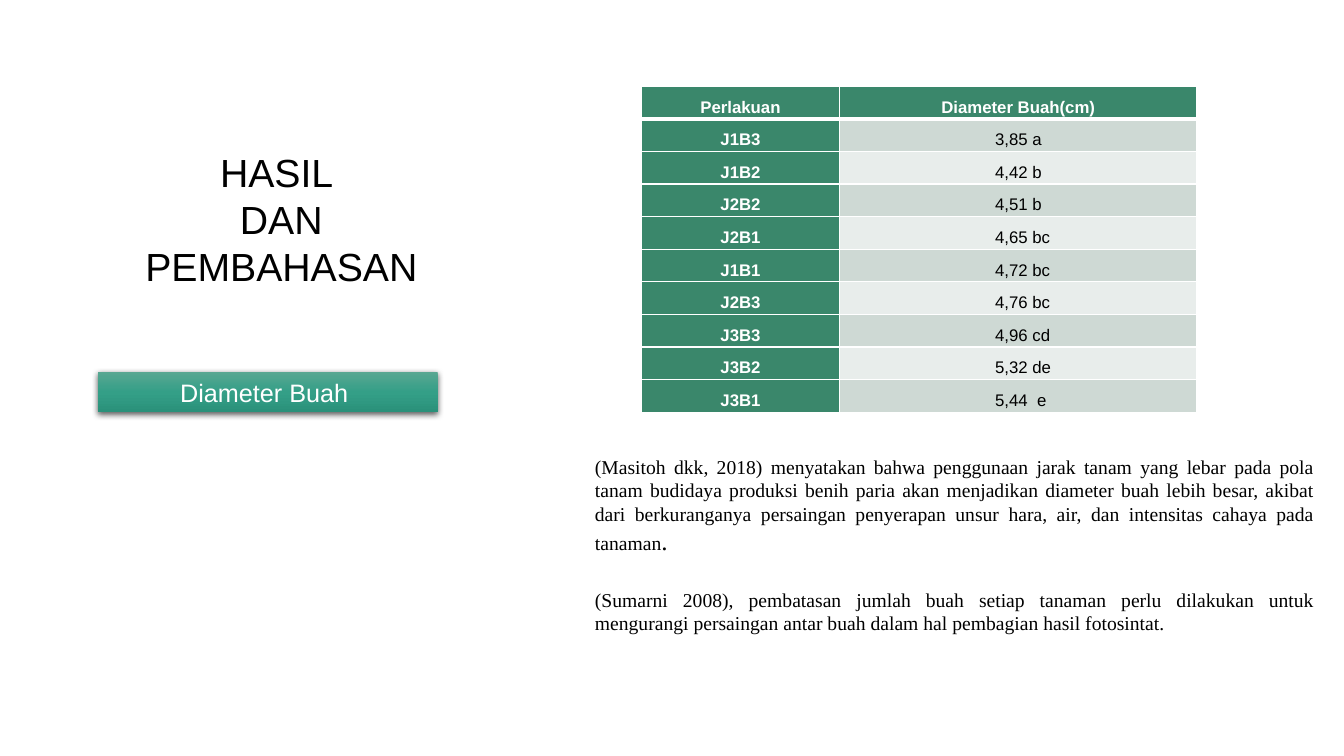
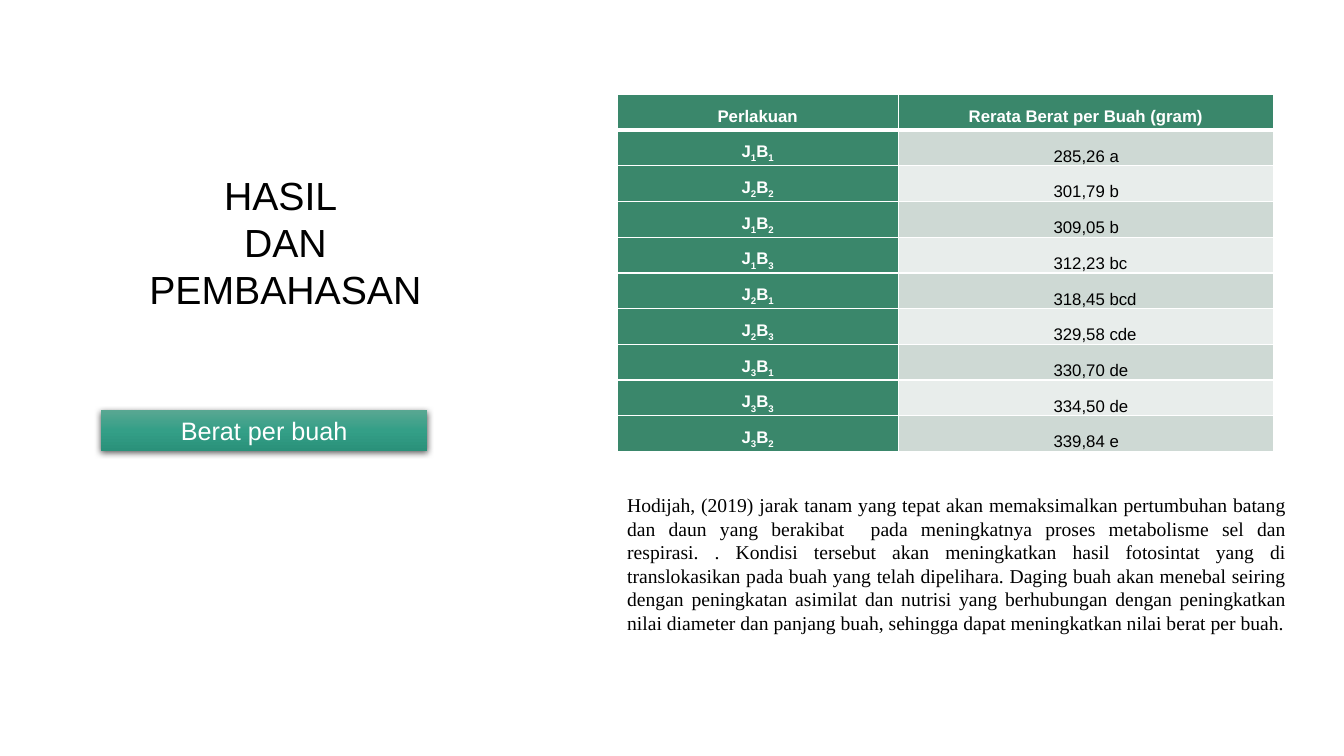
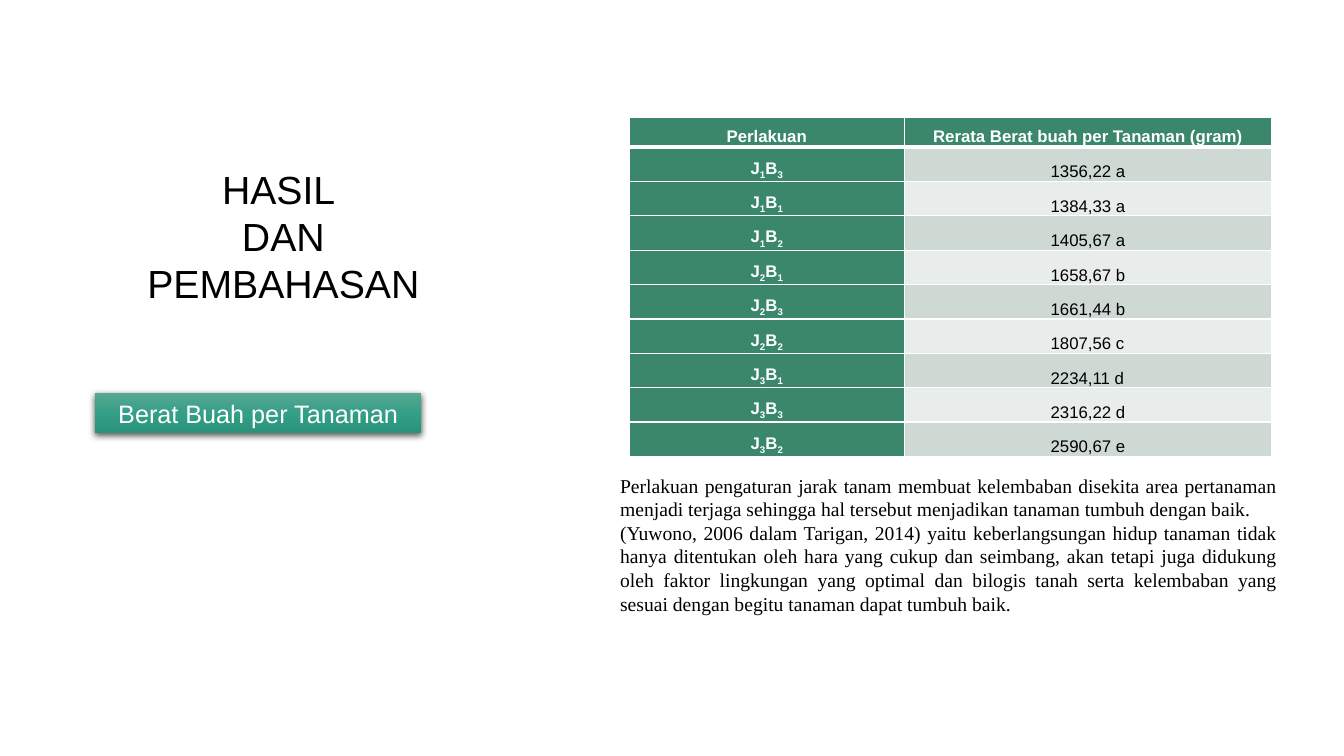
import pptx
import pptx.dml.color
import pptx.enum.shapes
import pptx.enum.text
import pptx.oxml
import pptx.oxml.ns
import pptx.util

Inches, Pt = pptx.util.Inches, pptx.util.Pt
ALIGN, ANCHOR = pptx.enum.text.PP_ALIGN, pptx.enum.text.MSO_ANCHOR
NS = pptx.oxml.ns.nsdecls("a")


def rgb(value):
    """Turn a hex string into a colour."""
    return pptx.dml.color.RGBColor.from_string(value)


def box(at):
    """Turn a left, top, width, height tuple into lengths."""
    return [Inches(v) for v in at]


class Deck:
    """Hold the style and the current slide."""

    SANS, SERIF = "Arial", "Times New Roman"
    WHITE, BLACK, GREEN = "FFFFFF", "000000", "3A876B"
    BANDS = ("CED9D4", "E8EDEB")
    GRADIENT = ((0, "59A792"), (50, "349F87"), (100, "2A917A"))

    def __init__(self):
        """Start a wide presentation."""
        self.prs = pptx.Presentation()
        self.prs.slide_width, self.prs.slide_height = Inches(13.33), Inches(7.5)
        self.s = None

    def slide(self):
        """Add a title and content slide."""
        self.s = self.prs.slides.add_slide(self.prs.slide_layouts[1])

    def font(self, r, size, name, color, bold=False):
        """Format one run."""
        r.font.size, r.font.name, r.font.bold = Pt(size), name, bold
        r.font.color.rgb = rgb(color)

    def set_text(self, sp, text, size, name, color, align, anchor):
        """Set and format the text of a shape or placeholder."""
        tf = sp.text_frame
        tf.text = text
        tf.word_wrap = True
        tf.auto_size = pptx.enum.text.MSO_AUTO_SIZE.NONE
        tf.vertical_anchor = anchor
        for p in tf.paragraphs:
            p.alignment = align
            p.space_before = Pt(0)
            for r in p.runs:
                self.font(r, size, name, color)
        return tf

    def title(self, at):
        """Fill the title placeholder with the section heading."""
        sp = self.s.shapes.title
        sp.left, sp.top, sp.width, sp.height = box(at)
        self.set_text(sp, "HASIL \nDAN\nPEMBAHASAN", 28, self.SANS, self.BLACK,
                      ALIGN.CENTER, ANCHOR.TOP)

    def body(self, at, text):
        """Fill the body placeholder with justified, unbulleted text."""
        sp = self.s.placeholders[1]
        sp.left, sp.top, sp.width, sp.height = box(at)
        tf = self.set_text(sp, text, 14, self.SERIF, self.BLACK, ALIGN.JUSTIFY, ANCHOR.TOP)
        for p in tf.paragraphs:
            pPr = p._p.get_or_add_pPr()
            pPr.set("marL", "0")
            pPr.set("indent", "0")
            pPr.append(pptx.oxml.parse_xml(f"<a:buNone {NS}/>"))
        return tf

    def label(self, at, text):
        """Draw the shaded gradient bar that names the variable."""
        sp = self.s.shapes.add_shape(pptx.enum.shapes.MSO_SHAPE.RECTANGLE, *box(at))
        sp.line.fill.background()
        sp.fill.gradient()
        sp.fill.gradient_angle = 270
        stops = sp._element.spPr.find(".//" + pptx.oxml.ns.qn("a:gsLst"))
        for stop in list(stops):
            stops.remove(stop)
        for pos, color in self.GRADIENT:
            stops.append(pptx.oxml.parse_xml(
                f'<a:gs {NS} pos="{pos * 1000}"><a:srgbClr val="{color}"/></a:gs>'))
        sp.shadow.inherit = False
        sp._element.spPr.find(pptx.oxml.ns.qn("a:effectLst")).append(pptx.oxml.parse_xml(
            f'<a:outerShdw {NS} blurRad="{Pt(4.5)}" dist="{Pt(1.5)}" dir="5400000" '
            f'algn="ctr" rotWithShape="0"><a:srgbClr val="{self.BLACK}">'
            '<a:alpha val="63000"/></a:srgbClr></a:outerShdw>'))
        self.set_text(sp, text, 18, self.SANS, self.WHITE, ALIGN.CENTER, ANCHOR.MIDDLE)

    def cell(self, c, text, fill, color, bold, bottom=1, subscript=False):
        """Fill, frame and letter one table cell."""
        c.fill.solid()
        c.fill.fore_color.rgb = rgb(fill)
        c.margin_left = c.margin_right = Inches(0.07)
        c.margin_top = c.margin_bottom = 0
        c.vertical_anchor = ANCHOR.MIDDLE
        for i, (side, width) in enumerate(zip("LRTB", (1, 1, 1, bottom))):
            c._tc.tcPr.insert(i, pptx.oxml.parse_xml(
                f'<a:ln{side} {NS} w="{Pt(width)}"><a:solidFill>'
                f'<a:srgbClr val="{self.WHITE}"/></a:solidFill></a:ln{side}>'))
        p = c.text_frame.paragraphs[0]
        p.alignment, p.line_spacing = ALIGN.CENTER, 1.5
        for part in text if subscript else [text]:
            r = p.add_run()
            r.text = part
            self.font(r, 12, self.SANS, color, bold)
            if subscript and part.isdigit():
                r._r.get_or_add_rPr().set("baseline", "-25000")

    def table(self, at, widths, header_height, heading, rows, indent, anchor, subscript):
        """Draw a table of treatments and their values, aligned at one indent."""
        t = self.s.shapes.add_table(len(rows) + 1, 2, *box(at)).table
        for col, width in zip(t.columns, widths):
            col.width = Inches(width)
        for row in t.rows:
            row.height = Inches((at[3] - header_height) / len(rows))
        t.rows[0].height = Inches(header_height)
        for j, text in enumerate(("Perlakuan", heading)):
            self.cell(t.cell(0, j), text, self.GREEN, self.WHITE, True, bottom=3)
        for i, (key, value) in enumerate(rows, 1):
            self.cell(t.cell(i, 0), key, self.GREEN, self.WHITE, True, subscript=subscript)
            c = t.cell(i, 1)
            self.cell(c, value, self.BANDS[(i - 1) % 2], self.BLACK, False)
            c.text_frame.paragraphs[0].alignment = ALIGN.LEFT
            c.margin_left = Inches(indent)
            c.vertical_anchor = anchor


def main():
    """Build the three result slides."""
    d = Deck()

    d.slide()
    d.label((0.97, 3.69, 3.37, 0.4), "Diameter Buah ")
    d.title((1.24, 1.42, 3.1, 1.51))
    tf = d.body((5.8, 4.46, 7.34, 1.88),
                "(Masitoh dkk, 2018) menyatakan bahwa penggunaan jarak tanam yang lebar pada "
                "pola tanam budidaya produksi benih paria akan menjadikan diameter buah lebih "
                "besar, akibat dari berkuranganya persaingan penyerapan unsur hara, air, dan "
                "intensitas cahaya pada tanaman\n"
                "(Sumarni 2008), pembatasan jumlah buah setiap tanaman perlu dilakukan untuk "
                "mengurangi persaingan antar buah dalam hal pembagian hasil fotosintat.")
    r = tf.paragraphs[0].add_run()
    r.text = ". "
    d.font(r, 18, d.SERIF, d.BLACK)
    tf.paragraphs[1].space_before = Pt(23)
    d.table((6.36, 0.86, 5.51, 3.23), (1.97, 3.54), 0.32, "Diameter Buah(cm)", [
        ("J1B3", "3,85 a"), ("J1B2", "4,42 b"), ("J2B2", "4,51 b"),
        ("J2B1", "4,65 bc"), ("J1B1", "4,72 bc"), ("J2B3", "4,76 bc"),
        ("J3B3", "4,96 cd"), ("J3B2", "5,32 de"), ("J3B1", "5,44  e"),
    ], 1.54, ANCHOR.MIDDLE, False)

    d.slide()
    d.label((1, 4.07, 3.24, 0.4), "Berat per buah")
    d.title((1.24, 1.65, 3.18, 1.51))
    d.body((6.12, 4.84, 6.74, 1.75),
           "Hodijah, (2019) jarak tanam yang tepat akan memaksimalkan pertumbuhan batang dan "
           "daun yang berakibat  pada meningkatnya proses metabolisme sel dan respirasi. . "
           "Kondisi tersebut akan meningkatkan hasil fotosintat yang di translokasikan pada "
           "buah yang telah dipelihara. Daging buah akan menebal seiring dengan peningkatan "
           "asimilat dan nutrisi yang berhubungan dengan peningkatkan nilai diameter dan "
           "panjang buah, sehingga dapat meningkatkan nilai berat per buah.")
    d.table((6.12, 0.94, 6.51, 3.54), (2.79, 3.72), 0.35, "Rerata Berat per Buah (gram)", [
        ("J1B1", "285,26 a"), ("J2B2", "301,79 b"), ("J1B2", "309,05 b"),
        ("J1B3", "312,23 bc"), ("J2B1", "318,45 bcd"), ("J2B3", "329,58 cde"),
        ("J3B1", "330,70 de"), ("J3B3", "334,50 de"), ("J3B2", "339,84 e"),
    ], 1.54, ANCHOR.BOTTOM, True)

    d.slide()
    d.label((0.94, 3.9, 3.24, 0.4), "Berat Buah per Tanaman")
    d.title((0.94, 1.59, 3.74, 1.51))
    d.body((6.05, 4.65, 6.72, 1.99),
           "Perlakuan pengaturan jarak tanam membuat kelembaban disekita area pertanaman "
           "menjadi terjaga sehingga hal tersebut menjadikan tanaman tumbuh dengan baik. \n"
           "(Yuwono, 2006 dalam Tarigan, 2014) yaitu keberlangsungan hidup tanaman tidak "
           "hanya ditentukan oleh hara yang cukup dan seimbang, akan tetapi juga didukung "
           "oleh faktor lingkungan yang optimal dan bilogis tanah serta kelembaban yang "
           "sesuai dengan begitu tanaman dapat tumbuh baik.")
    d.table((6.24, 1.16, 6.37, 3.37), (2.73, 3.64), 0.3,
            "Rerata Berat buah per Tanaman (gram)", [
                ("J1B3", "1356,22 a"), ("J1B1", "1384,33 a"), ("J1B2", "1405,67 a"),
                ("J2B1", "1658,67 b"), ("J2B3", "1661,44 b"), ("J2B2", "1807,56 c"),
                ("J3B1", "2234,11 d"), ("J3B3", "2316,22 d"), ("J3B2", "2590,67 e"),
            ], 1.45, ANCHOR.BOTTOM, True)

    d.prs.save("out.pptx")


if __name__ == "__main__":
    main()
